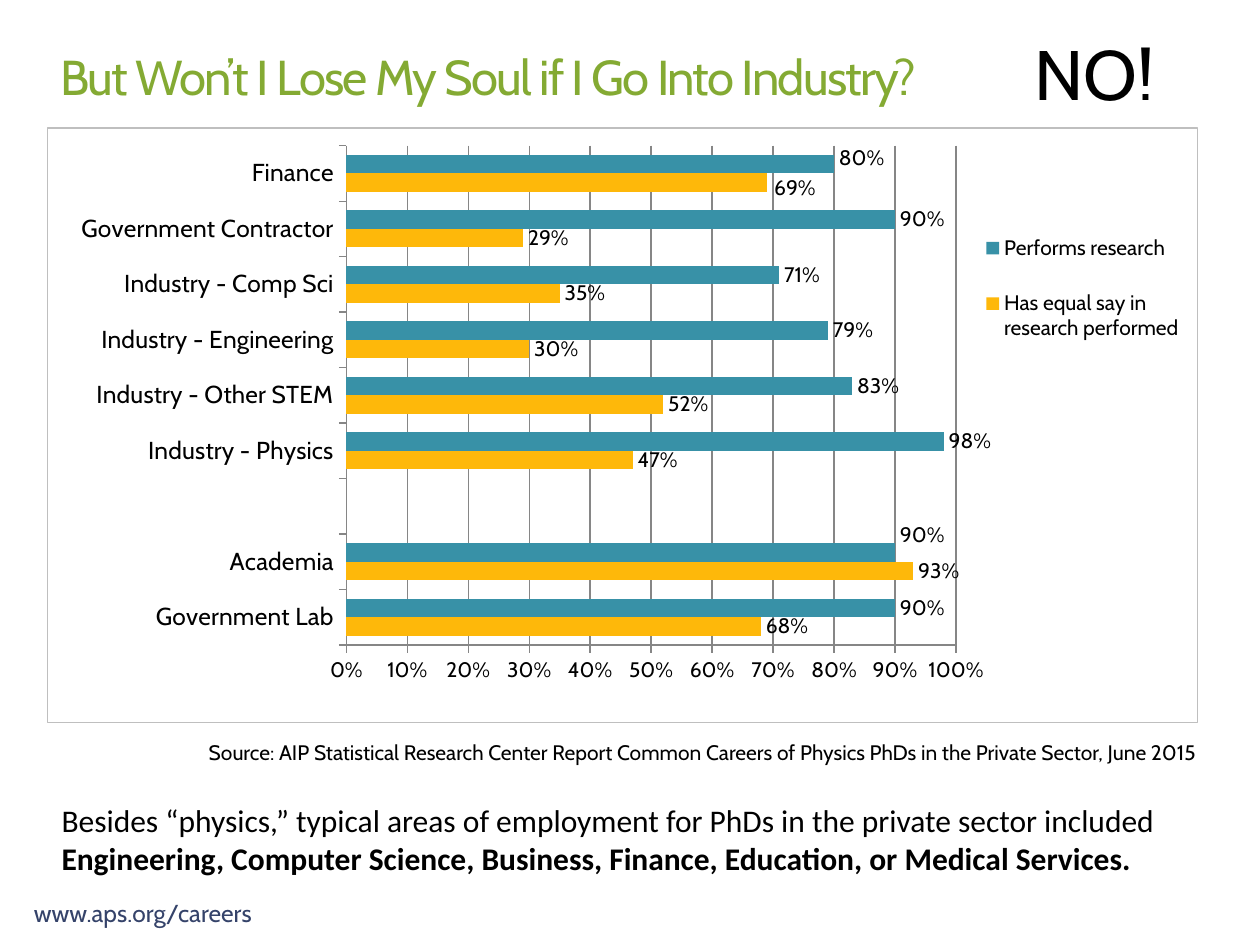
from lxml import etree
from pptx import Presentation
from pptx.chart.data import CategoryChartData
from pptx.dml.color import RGBColor
from pptx.enum import chart as ch, text as tx
from pptx.oxml import parse_xml
from pptx.oxml.ns import nsdecls, qn
from pptx.util import Inches, Pt

# Content
TITLE = "But Won’t I Lose My Soul if I Go Into Industry?"
ROWS = [  # category, has equal say, performs research
    ("Government Lab", 0.68, 0.9),
    ("Academia", 0.93, 0.9),
    ("", None, None),
    ("Industry - Physics", 0.47, 0.98),
    ("Industry - Other STEM", 0.52, 0.83),
    ("Industry - Engineering", 0.3, 0.79),
    ("Industry - Comp Sci", 0.35, 0.71),
    ("Government Contractor", 0.29, 0.9),
    ("Finance", 0.69, 0.8),
]
NAMES = ["Has equal say in research performed", "Performs research"]
NUDGES = [  # series, point, x and y shift as shares of the chart
    (0, 8, 0.002, 0.01), (1, 1, 0, -0.03), (1, 8, 0, -0.01),
]

# Theme
THEME = {
    "head": "Cabin", "body": "Calibri", "ink": "000000", "green": "84AA33",
    "navy": "35436A", "grid": "868686", "edge": "BFBFBF",
    "bars": ["FEB80A", "3891A7"],
    "title": 28, "shout": 40, "text": 18, "axis": 14, "small": 12,
}

LEFT, MID, RIGHT = tx.PP_ALIGN.LEFT, tx.PP_ALIGN.CENTER, tx.PP_ALIGN.RIGHT
TEXTS = [  # box, runs (text, bold), font, size, colour, alignment, wrap
    ((0.17, 7.08, 2.33, 0.34), [("www.aps.org/careers", False)],
     "head", "axis", "navy", LEFT, True),
    ((8.06, 0.19, 1.25, 0.77), [("NO!", False)],
     "head", "shout", "ink", MID, False),
    ((0.39, 6.31, 9.46, 0.71),
     [("Besides “physics,” typical areas of employment for PhDs in the "
       "private sector included ", False),
      ("Engineering, Computer Science, Business, Finance, Education, "
       "or Medical Services.", True)],
     "body", "text", "ink", LEFT, True),
    ((1.42, 5.82, 8.18, 0.3),
     [("Source: AIP Statistical Research Center Report Common Careers of "
       "Physics PhDs in the Private Sector, June 2015", False)],
     "head", "small", "ink", RIGHT, True),
]


def rgb(key):
    return RGBColor.from_string(THEME.get(key, key))


def style(font, face, size, tint, bold=False):
    look = {"name": THEME[face], "size": Pt(THEME[size]), "bold": bold}
    for key, val in look.items():
        setattr(font, key, val)
    font.color.rgb = rgb(tint)


def layout(**vals):
    """Manual chart layout from fractions of the chart area."""
    root = parse_xml(f"<c:layout {nsdecls('c')}><c:manualLayout/></c:layout>")
    for key, val in vals.items():
        etree.SubElement(root[0], qn(f"c:{key}")).set("val", str(val))
    return root


def place(parent, item, after=None):
    """Put a layout in its parent, replacing any that is there."""
    for old in parent.findall(qn("c:layout")):
        parent.remove(old)
    if after:
        parent.find(qn(after)).addnext(item)
    else:
        parent.insert(0, item)


def add_title(slide):
    box = slide.shapes.title
    for key, val in zip(("left", "top", "width", "height"),
                        (0.38, 0.27, 7.19, 0.67)):
        setattr(box, key, Inches(val))
    frame = box.text_frame
    frame.vertical_anchor = tx.MSO_ANCHOR.MIDDLE
    frame.auto_size = tx.MSO_AUTO_SIZE.NONE
    para = frame.paragraphs[0]
    para.alignment = LEFT
    run = para.add_run()
    run.text = TITLE
    style(run.font, "head", "title", "green")
    run.font._element.set("spc", "-100")


def add_text(slide, box, runs, face, size, tint, align, wrap):
    frame = slide.shapes.add_textbox(*map(Inches, box)).text_frame
    frame.word_wrap = wrap
    para = frame.paragraphs[0]
    para.alignment = align
    for words, bold in runs:
        run = para.add_run()
        run.text = words
        style(run.font, face, size, tint, bold)


def add_bars(slide):
    data = CategoryChartData(number_format="0%")
    cats, *cols = zip(*ROWS)
    data.categories = cats
    for name, vals in zip(NAMES, cols):
        data.add_series(name, vals)
    box = map(Inches, (0.37, 1.01, 9.14, 4.73))
    chart = slide.shapes.add_chart(
        ch.XL_CHART_TYPE.BAR_CLUSTERED, *box, data).chart
    chart.has_title = False
    style(chart.font, "head", "text", "ink")

    # Bars and their labels
    plot = chart.plots[0]
    plot.gap_width, plot.overlap, plot.vary_by_categories = 100, 0, False
    for bars, tint in zip(plot.series, THEME["bars"]):
        bars.format.fill.solid()
        bars.format.fill.fore_color.rgb = rgb(tint)
        tags = bars.data_labels
        look = {"show_value": True, "number_format": "0%",
                "number_format_is_linked": False,
                "position": ch.XL_LABEL_POSITION.OUTSIDE_END}
        for key, val in look.items():
            setattr(tags, key, val)
        style(tags.font, "head", "small", "ink")
    for row, spot, x, y in NUDGES:
        tag = plot.series[row].points[spot].data_label
        style(tag.font, "head", "small", "ink")
        tag.position = ch.XL_LABEL_POSITION.OUTSIDE_END
        node = chart.element.xpath(
            f".//c:ser[{row + 1}]//c:dLbl[c:idx/@val='{spot}']")[0]
        place(node, layout(x=x, y=y), "c:idx")

    # Axes
    for axis, size in ((chart.category_axis, "axis"),
                       (chart.value_axis, "small")):
        style(axis.tick_labels.font, "head", size, "ink")
        axis.major_tick_mark = ch.XL_TICK_MARK.OUTSIDE
        axis.format.line.color.rgb = rgb("grid")
    chart.category_axis.has_major_gridlines = False
    scale = {"minimum_scale": 0, "maximum_scale": 1, "major_unit": 0.1,
             "has_major_gridlines": True}
    for key, val in scale.items():
        setattr(axis, key, val)
    axis.major_gridlines.format.line.color.rgb = rgb("grid")
    axis.tick_labels.number_format = "0%"
    axis.tick_labels.number_format_is_linked = False

    # Legend, plot area and border
    chart.has_legend = True
    chart.legend.position = ch.XL_LEGEND_POSITION.RIGHT
    chart.legend.include_in_layout = False
    style(chart.legend.font, "head", "small", "ink")
    root = chart.element
    place(root.find(".//" + qn("c:legend")),
          layout(xMode="edge", yMode="edge", x=0.81, y=0.13, w=0.18, h=0.28),
          "c:legendPos")
    place(root.find(".//" + qn("c:plotArea")),
          layout(layoutTarget="inner", xMode="edge", yMode="edge",
                 x=0.26, y=0.03, w=0.53, h=0.84))
    root.find(qn("c:chart")).addnext(parse_xml(
        f"<c:spPr {nsdecls('c', 'a')}><a:noFill/><a:ln w='{Pt(0.75)}'>"
        f"<a:solidFill><a:srgbClr val='{THEME['edge']}'/></a:solidFill>"
        "</a:ln></c:spPr>"))


def main():
    deck = Presentation()
    deck.slide_width, deck.slide_height = Inches(10), Inches(7.5)
    slide = deck.slides.add_slide(deck.slide_layouts[5])
    add_title(slide)
    add_bars(slide)
    for item in TEXTS:
        add_text(slide, *item)
    deck.save("out.pptx")


if __name__ == "__main__":
    main()
